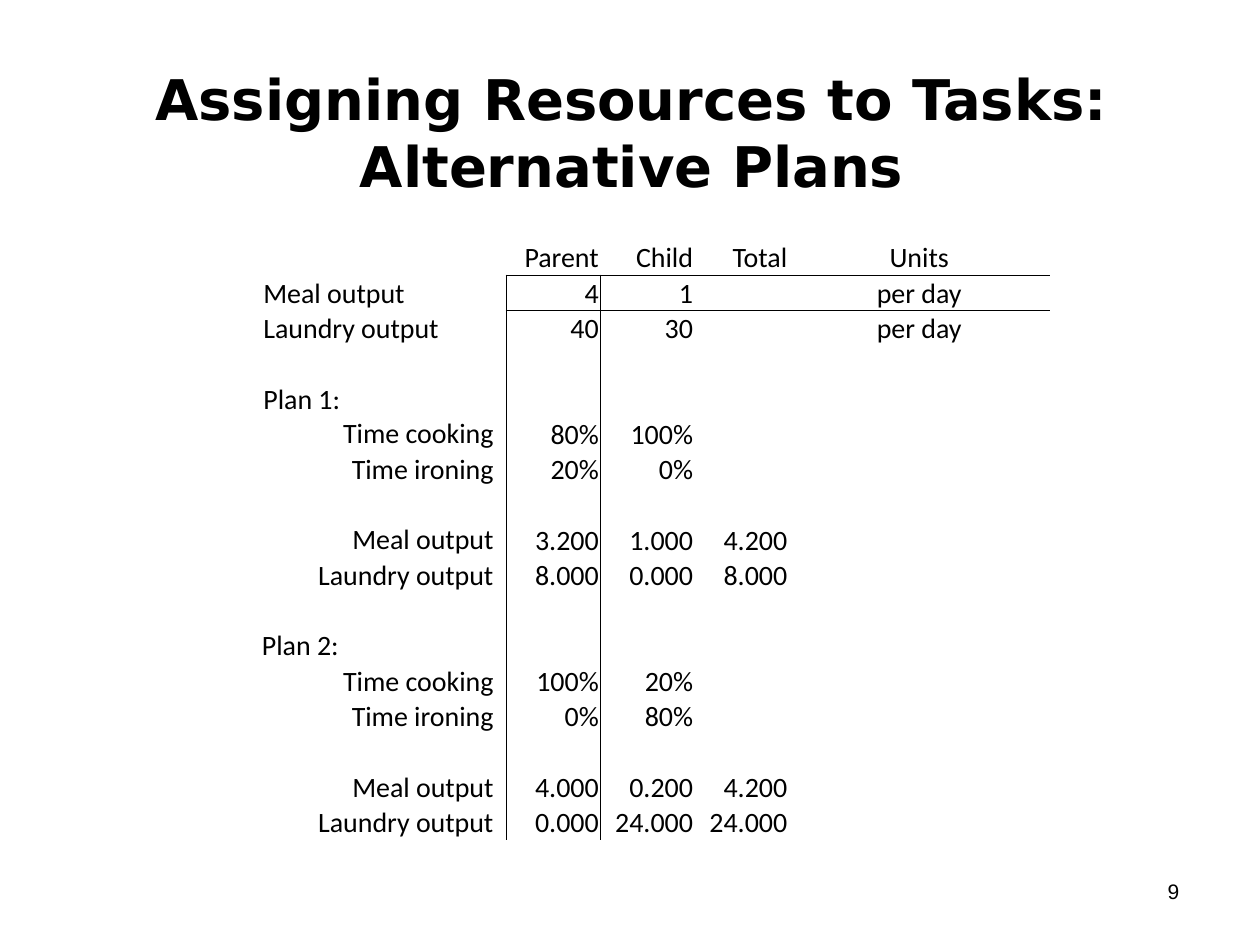
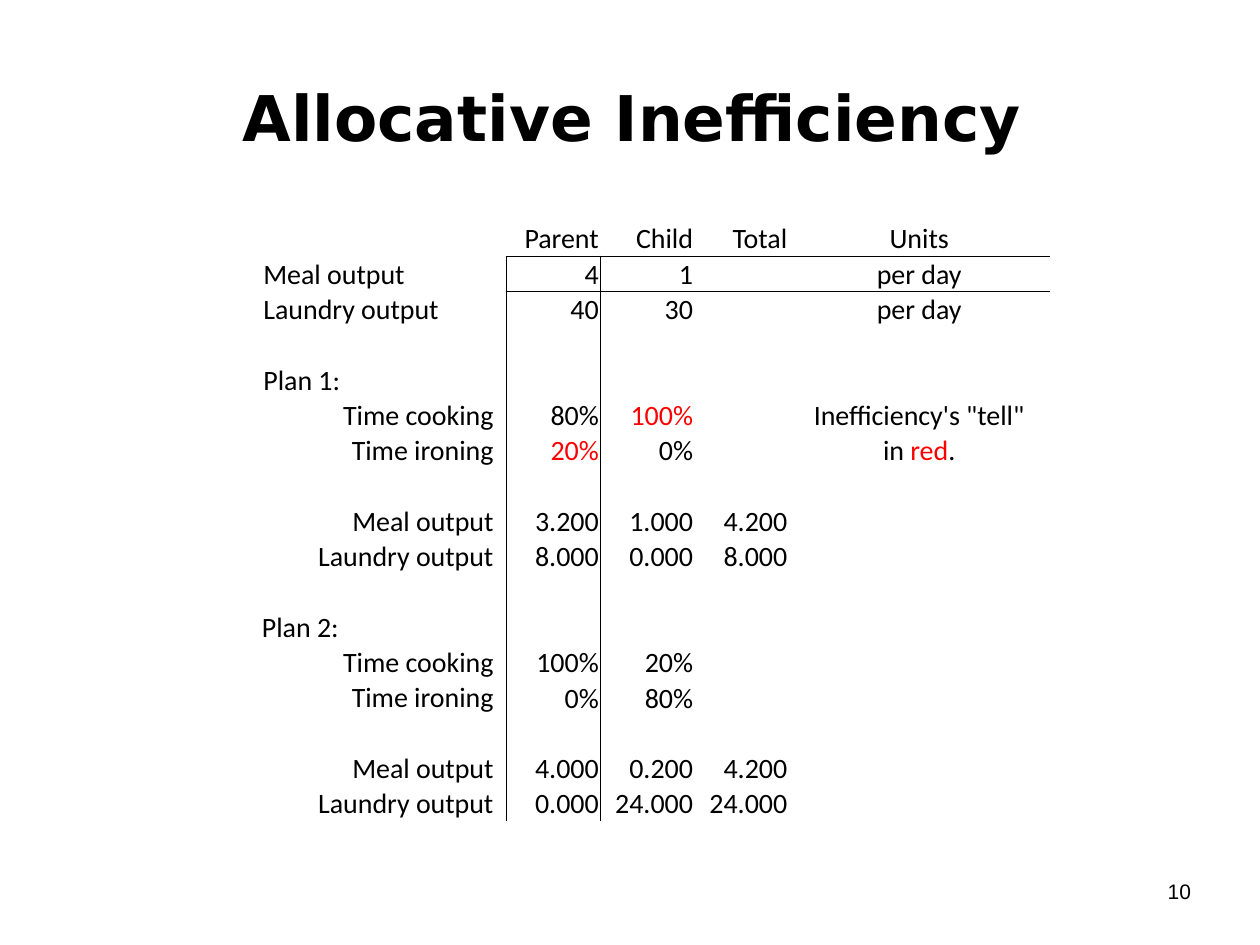
"""Build two slides comparing plans for sharing household tasks."""
import lxml.etree
import pptx
import pptx.dml.color
import pptx.enum.text
import pptx.oxml.ns
import pptx.util

Cm = pptx.util.Cm
Pt = pptx.util.Pt
ALIGN = pptx.enum.text.PP_ALIGN
ANCHOR = pptx.enum.text.MSO_ANCHOR
qn = pptx.oxml.ns.qn

BLACK = pptx.dml.color.RGBColor(0x00, 0x00, 0x00)
RED = pptx.dml.color.RGBColor(0xFF, 0x00, 0x00)
NO_STYLE = "{2D5ABB26-0587-4C30-8999-92F81FD0307C}"
COLUMN_WIDTHS = [4.92, 1.9, 1.9, 1.9, 5.26]
FIRST_PLAN_ROW = 5
HAIRLINE = Pt(0.5)

PLAN_ROWS = [
    ["", "Parent", "Child", "Total", "Units"],
    ["Meal output", "4", "1", "", "per day"],
    ["Laundry output", "40", "30", "", "per day"],
    ["", "", "", "", ""],
    ["Plan 1:", "", "", "", ""],
    ["Time cooking", "80%", "100%", "", ""],
    ["Time ironing", "20%", "0%", "", ""],
    ["", "", "", "", ""],
    ["Meal output", "3.200", "1.000", "4.200", ""],
    ["Laundry output", "8.000", "0.000", "8.000", ""],
    ["", "", "", "", ""],
    ["Plan 2:", "", "", "", ""],
    ["Time cooking", "100%", "20%", "", ""],
    ["Time ironing", "0%", "80%", "", ""],
    ["", "", "", "", ""],
    ["Meal output", "4.000", "0.200", "4.200", ""],
    ["Laundry output", "0.000", "24.000", "24.000", ""],
]
TELL_CELLS = {
    (5, 2): "|100%",
    (5, 4): "Inefficiency's \"tell\"",
    (6, 1): "|20%",
    (6, 4): "in |red|.",
}
PAGES = [
    {"number": "9", "title": ["Assigning Resources to Tasks:", "Alternative Plans"],
     "size": 32, "title_height": 3.18, "table_top": 4.83, "changes": {}},
    {"number": "10", "title": ["Allocative Inefficiency"],
     "size": 36, "title_height": 2.54, "table_top": 4.45, "changes": TELL_CELLS},
]


def add_span(para, text, font, size, color=BLACK, bold=False):
    span = para.add_run()
    span.text = text
    span.font.name = font
    span.font.size = Pt(size)
    span.font.color.rgb = color
    span.font.bold = bold


def add_border(cell, side):
    line = lxml.etree.SubElement(cell._tc.get_or_add_tcPr(), qn("a:ln" + side), w=str(HAIRLINE))
    fill = lxml.etree.SubElement(line, qn("a:solidFill"))
    lxml.etree.SubElement(fill, qn("a:srgbClr"), val=str(BLACK))


deck = pptx.Presentation()
deck.slide_width = Cm(25.4)
deck.slide_height = Cm(19.05)

for content in PAGES:
    page = deck.slides.add_slide(deck.slide_layouts[6])

    number_box = page.shapes.add_textbox(Cm(23.29), Cm(17.58), Cm(1.07), Cm(0.76))
    add_span(number_box.text_frame.paragraphs[0], content["number"], "Arial", 12)

    title_box = page.shapes.add_textbox(Cm(0.99), Cm(1.07), Cm(23.5), Cm(content["title_height"]))
    frame = title_box.text_frame
    frame.word_wrap = True
    frame.vertical_anchor = ANCHOR.MIDDLE
    frame.margin_left = frame.margin_right = frame.margin_top = frame.margin_bottom = 0
    para = frame.paragraphs[0]
    para.alignment = ALIGN.CENTER
    for index, text in enumerate(content["title"]):
        if index:
            para.add_line_break()
        add_span(para, text, "DejaVu Sans", content["size"], bold=True)

    holder = page.shapes.add_table(
        len(PLAN_ROWS), len(COLUMN_WIDTHS),
        Cm(5.28), Cm(content["table_top"]), Cm(sum(COLUMN_WIDTHS)), Cm(12.12))
    table = holder.table
    table.first_row = False
    table.horz_banding = False
    table._tbl.tblPr.find(qn("a:tableStyleId")).text = NO_STYLE
    for column, width in zip(table.columns, COLUMN_WIDTHS):
        column.width = Cm(width)

    for row, values in enumerate(PLAN_ROWS):
        for col, value in enumerate(values):
            cell = table.cell(row, col)
            text = content["changes"].get((row, col), value)
            plan_label = col == 0 and row >= FIRST_PLAN_ROW

            cell.vertical_anchor = ANCHOR.BOTTOM
            cell.margin_left = cell.margin_top = Cm(0 if plan_label else 0.03)
            cell.margin_right = Cm(0.25 if plan_label else 0.03)
            cell.margin_bottom = 0

            if row > 0 and col == 1:
                add_border(cell, "L")
            if row > 0 and col == 0:
                add_border(cell, "R")
            if row == 1 and col > 0:
                add_border(cell, "T")
            if row == 0 and col > 0:
                add_border(cell, "B")
            cell.fill.background()

            para = cell.text_frame.paragraphs[0]
            if col == 4:
                para.alignment = ALIGN.CENTER
            elif col > 0 or (plan_label and not text.endswith(":")):
                para.alignment = ALIGN.RIGHT
            else:
                para.alignment = ALIGN.LEFT
            for index, part in enumerate(text.split("|")):
                if part:
                    add_span(para, part, "Calibri", 16, RED if index % 2 else BLACK)
            if not text:
                lxml.etree.SubElement(para._p, qn("a:endParaRPr"), sz="1600")

deck.save("out.pptx")
